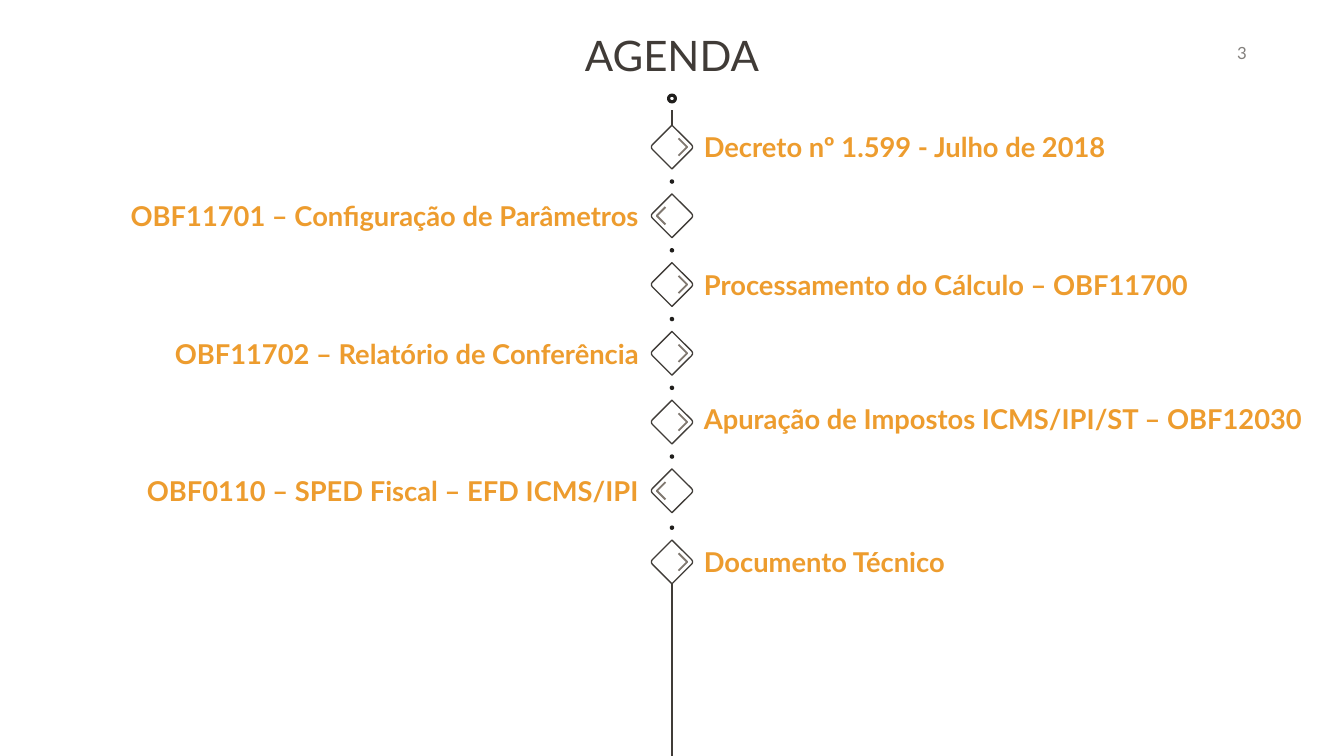
from lxml.etree import SubElement
from pptx import Presentation
from pptx.dml.color import RGBColor
from pptx.enum.shapes import MSO_CONNECTOR, MSO_SHAPE
from pptx.enum.text import MSO_ANCHOR, PP_ALIGN
from pptx.oxml.ns import qn
from pptx.util import Cm, Pt

ORANGE, DARK, BLACK, GREY = "ED9C2E", "403C38", "201E1C", "807870"
AXIS = 22.57  # centre of the timeline, in cm


def add_mark(shapes, kind, center_x, center_y, size, fill=None, line=None, width=0):
    shape = shapes.add_shape(kind, Cm(center_x - size / 2), Cm(center_y - size / 2),
                             Cm(size), Cm(size))
    shape.shadow.inherit = False
    if fill:
        shape.fill.solid()
        shape.fill.fore_color.rgb = RGBColor.from_string(fill)
    else:
        shape.fill.background()
    if line:
        shape.line.color.rgb = RGBColor.from_string(line)
        shape.line.width = Pt(width)
    else:
        shape.line.fill.background()
    return shape


def add_text(text, left, center_y, width, height, size, color, align, bold=False):
    box = slide.shapes.add_textbox(Cm(left), Cm(center_y - height / 2), Cm(width), Cm(height))
    frame = box.text_frame
    frame.word_wrap = True
    frame.vertical_anchor = MSO_ANCHOR.MIDDLE
    frame.text = text
    paragraph = frame.paragraphs[0]
    paragraph.alignment = align
    font = paragraph.runs[0].font
    font.name, font.size, font.bold = "Lato", Pt(size), bold
    font.color.rgb = RGBColor.from_string(color)


presentation = Presentation()
presentation.slide_width, presentation.slide_height = Cm(45.14), Cm(25.4)
slide = presentation.slides.add_slide(presentation.slide_layouts[6])

# Title and page number
add_text("AGENDA", 4.32, 1.83, 36.5, 1.42, 40, "403B37", PP_ALIGN.CENTER)
add_text("3", 41.3, 1.79, 1.19, 0.94, 16, "83807D", PP_ALIGN.LEFT)

# Timeline: ring at the top and the two line segments
add_mark(slide.shapes, MSO_SHAPE.OVAL, AXIS, 3.31, 0.23, line=BLACK, width=3)
for top, bottom in [(3.71, 4.22), (19.61, 25.4)]:
    connector = slide.shapes.add_connector(MSO_CONNECTOR.STRAIGHT,
                                           Cm(AXIS), Cm(top), Cm(AXIS), Cm(bottom))
    connector.line.color.rgb = RGBColor.from_string(DARK)
    connector.line.width = Pt(1.25)
    SubElement(connector._element.spPr, qn("a:effectLst"))

# Agenda items: text, side of the text, direction of the chevron
items = [
    ("Decreto nº 1.599 - Julho de 2018", "right", "right"),
    ("OBF11701 – Configuração de Parâmetros", "left", "left"),
    ("Processamento do Cálculo – OBF11700", "right", "right"),
    ("OBF11702 – Relatório de Conferência", "left", "right"),
    ("Apuração de Impostos ICMS/IPI/ST – OBF12030", "right", "right"),
    ("OBF0110 – SPED Fiscal – EFD ICMS/IPI", "left", "left"),
    ("Documento Técnico", "right", "right"),
]
text_shift = {4: -0.11}
marker_shift = {6: 0.08}

for index, (text, side, direction) in enumerate(items):
    center_y = 4.94 + 2.31 * index + marker_shift.get(index, 0)
    marker = slide.shapes.add_group_shape().shapes

    # Diamond with rounded left and right corners
    diamond = add_mark(marker, MSO_SHAPE.ROUND_2_DIAG_RECTANGLE, AXIS, center_y, 1.04,
                       "FFFFFF", DARK, 1.25)
    diamond.adjustments[0], diamond.adjustments[1] = 0.1, 0
    diamond.rotation = 315

    # Open chevron inside the diamond
    sign = 1 if direction == "right" else -1
    arm_x, tip_x = AXIS + sign * 0.22, AXIS + sign * 0.51
    outline = marker.build_freeform(Cm(arm_x), Cm(center_y - 0.29))
    outline.add_line_segments([(Cm(tip_x), Cm(center_y)), (Cm(arm_x), Cm(center_y + 0.29))],
                              close=False)
    chevron = outline.convert_to_shape()
    chevron.shadow.inherit = False
    chevron.fill.background()
    chevron.line.color.rgb = RGBColor.from_string(GREY)
    chevron.line.width = Pt(1.75)

    # Dot between this diamond and the one above
    if index > 0:
        add_mark(marker, MSO_SHAPE.OVAL, AXIS, center_y - 1.15, 0.15, BLACK)

    left, align = (23.39, PP_ALIGN.LEFT) if side == "right" else (1.53, PP_ALIGN.RIGHT)
    width = 21.34 if side == "right" else 20.19
    add_text(text, left, center_y + text_shift.get(index, 0), width, 0.94, 26,
             ORANGE, align, bold=True)

presentation.save("out.pptx")
